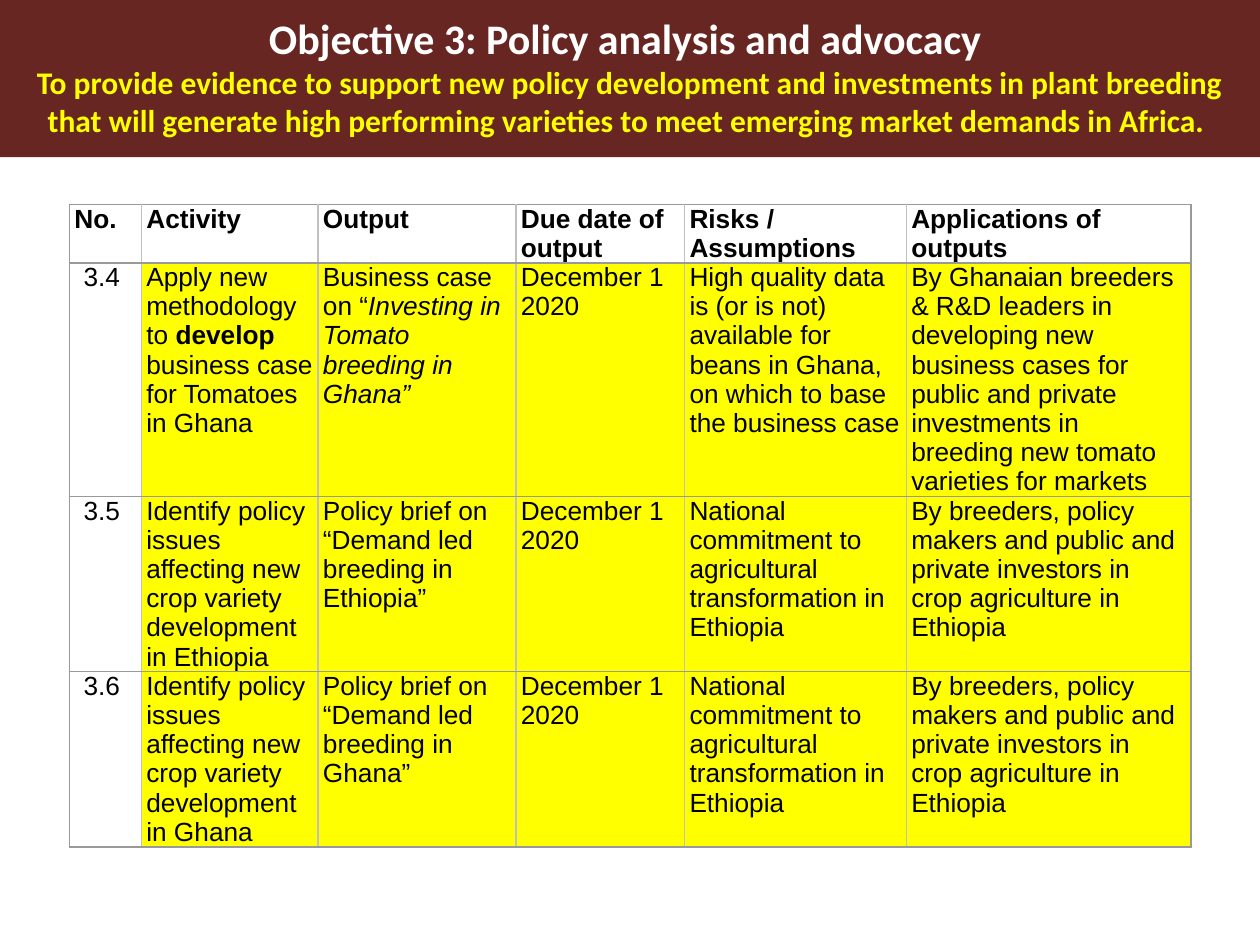
from lxml import etree
from pptx import Presentation
from pptx import util as u
from pptx.dml.color import RGBColor
from pptx.enum import shapes, text
from pptx.oxml.ns import qn

MAROON = RGBColor(0x68, 0x26, 0x22)
YELLOW = RGBColor(0xFF, 0xFF, 0x00)
WHITE = RGBColor(0xFF, 0xFF, 0xFF)
BLACK = RGBColor(0x00, 0x00, 0x00)
GREY = RGBColor(0x99, 0x99, 0x99)
SILVER = RGBColor(0xC0, 0xC0, 0xC0)

HEADINGS = ["No.", "Activity", "Output", "Due date of output",
            "Risks / Assumptions", "Applications of outputs"]
DUE_DATE = "December 1 2020"
COMMITMENT = "National commitment to agricultural transformation in Ethiopia"
INVESTORS = ("By breeders, policy makers and public and private investors "
             "in crop agriculture in Ethiopia")
ROWS = [
    HEADINGS,
    ["3.4 ",
     [("Apply new methodology to ", ""), ("develop ", "bold"),
      ("business case for Tomatoes in Ghana", "")],
     [("Business case on “", ""), ("Investing in Tomato breeding in Ghana”", "italic")],
     DUE_DATE,
     "High quality data is (or is not) available for beans in Ghana, "
     "on which to base the business case",
     "By Ghanaian breeders & R&D leaders in developing new business cases for public "
     "and private investments in breeding new tomato varieties for markets"],
]
for number, country in [("3.5 ", "Ethiopia"), ("3.6 ", "Ghana")]:
    ROWS.append([
        number,
        f"Identify policy issues affecting new crop variety development in {country}",
        f"Policy brief on “Demand led breeding in {country}”",
        DUE_DATE, COMMITMENT, INVESTORS])
COLUMN_WIDTHS = [1.45, 3.56, 3.99, 3.4, 4.47, 5.74]
ROW_HEIGHTS = [1.18, 4.71, 3.53, 3.53]


def set_border(cell, side, color):
    line = etree.Element(qn(f"a:{side}"), w=str(u.Pt(1)))
    fill = etree.SubElement(line, qn("a:solidFill"))
    etree.SubElement(fill, qn("a:srgbClr"), val=str(color))
    properties = cell._tc.get_or_add_tcPr()
    properties.insert(len(properties.findall("*")), line)


presentation = Presentation()
presentation.slide_width = u.Cm(25.4)
presentation.slide_height = u.Cm(19.05)
slide = presentation.slides.add_slide(presentation.slide_layouts[5])

title = slide.shapes.title
title.left, title.top, title.width, title.height = u.Cm(0), u.Cm(0.13), u.Cm(25.4), u.Cm(3.6)
frame = title.text_frame
frame.word_wrap = True
frame.auto_size = text.MSO_AUTO_SIZE.NONE
frame.vertical_anchor = text.MSO_ANCHOR.TOP
frame.text = (
    "Objective 3: Policy analysis and advocacy \n"
    "To provide evidence to support new policy development and investments in plant breeding "
    "that will generate high performing varieties to meet emerging market demands in Africa. ")
for paragraph, size, color in zip(frame.paragraphs, [24, 18], [WHITE, YELLOW]):
    paragraph.alignment = text.PP_ALIGN.CENTER
    paragraph.font.name = "Calibri"
    paragraph.font.size = u.Pt(size)
    paragraph.font.bold = True
    paragraph.font.color.rgb = color

band = slide.shapes.add_shape(
    shapes.MSO_SHAPE.RECTANGLE, u.Cm(0), u.Cm(0), u.Cm(25.4), u.Cm(3.17))
band.shadow.inherit = False
band.fill.solid()
band.fill.fore_color.rgb = MAROON
band.line.fill.background()
title.element.addprevious(band.element)

table = slide.shapes.add_table(
    len(ROWS), len(HEADINGS), u.Cm(1.4), u.Cm(4.12),
    u.Cm(sum(COLUMN_WIDTHS)), u.Cm(sum(ROW_HEIGHTS))).table
table.horz_banding = False
for column, width in zip(table.columns, COLUMN_WIDTHS):
    column.width = u.Cm(width)
for row, height in zip(table.rows, ROW_HEIGHTS):
    row.height = u.Cm(height)

for row_index, contents in enumerate(ROWS):
    for column_index, content in enumerate(contents):
        cell = table.cell(row_index, column_index)
        cell.margin_left = cell.margin_right = u.Cm(0.1)
        cell.margin_top = cell.margin_bottom = u.Cm(0)
        set_border(cell, "lnL", SILVER if column_index else GREY)
        set_border(cell, "lnR", SILVER if column_index < len(HEADINGS) - 1 else GREY)
        set_border(cell, "lnT", GREY)
        set_border(cell, "lnB", GREY)
        if row_index and column_index:
            cell.fill.solid()
            cell.fill.fore_color.rgb = YELLOW
        else:
            cell.fill.background()

        paragraph = cell.text_frame.paragraphs[0]
        paragraph.space_before = paragraph.space_after = u.Pt(2)
        if row_index and not column_index:
            paragraph.alignment = text.PP_ALIGN.CENTER
        paragraph.font.name = "Arial"
        paragraph.font.size = u.Pt(15)
        paragraph.font.bold = row_index == 0
        paragraph.font.color.rgb = BLACK
        for words, style in [(content, "")] if isinstance(content, str) else content:
            run = paragraph.add_run()
            run.text = words
            if style == "bold":
                run.font.bold = True
            elif style == "italic":
                run.font.italic = True

presentation.save("out.pptx")
